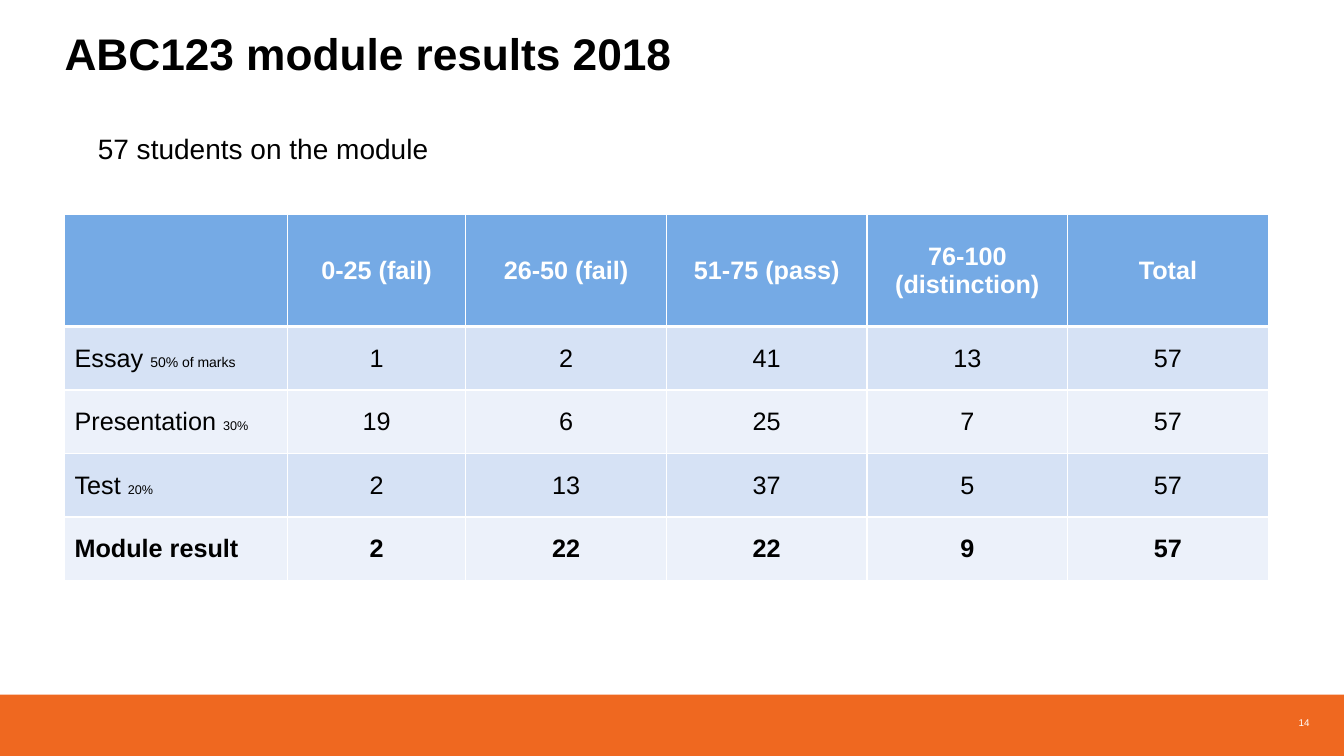
"""Build the slide with the ABC123 module results table."""
from lxml import etree
from pptx import Presentation
from pptx.dml.color import RGBColor
from pptx.enum.shapes import MSO_SHAPE as Shape
from pptx.enum.text import MSO_ANCHOR as Anchor, PP_ALIGN as Align
from pptx.oxml.ns import qn
from pptx.util import Inches, Pt

WHITE = RGBColor(0xFF, 0xFF, 0xFF)
BLACK = RGBColor(0, 0, 0)
ORANGE = RGBColor(0xEF, 0x68, 0x20)
HEADER_BLUE = RGBColor(0x75, 0xAA, 0xE5)
BAND_BLUE = RGBColor(0xD6, 0xE2, 0xF5)
PALE_BLUE = RGBColor(0xEC, 0xF1, 0xFA)

COLUMN_WIDTHS = [2.21, 1.77, 1.99, 1.99, 1.99, 1.99]
ROW_HEIGHTS = [1.11, 0.63, 0.63, 0.63, 0.63]
RESULTS = [
    ["", "0-25 (fail)", "26-50 (fail)", "51-75 (pass)", "76-100 (distinction)", "Total"],
    ["Essay", 1, 2, 41, 13, 57],
    ["Presentation", 19, 6, 25, 7, 57],
    ["Test", 2, 13, 37, 5, 57],
    ["Module result", 2, 22, 22, 9, 57],
]
WEIGHTS = {"Essay": ("50% of marks", 10), "Presentation": ("30%", 9), "Test": ("20%", 9)}


def add_run(paragraph, text, size, color=BLACK, bold=False):
    run = paragraph.add_run()
    run.text = text
    run.font.name = "Arial"
    run.font.size = Pt(size)
    run.font.bold = bold
    run.font.color.rgb = color


def add_text(slide, text, left, top, width, height, size, color=BLACK, bold=False):
    frame = slide.shapes.add_textbox(
        Inches(left), Inches(top), Inches(width), Inches(height)).text_frame
    frame.word_wrap = True
    frame.margin_left = frame.margin_right = frame.margin_top = frame.margin_bottom = 0
    add_run(frame.paragraphs[0], text, size, color, bold)
    return frame


presentation = Presentation()
presentation.slide_width = Inches(13.33)
presentation.slide_height = Inches(7.5)
slide = presentation.slides.add_slide(presentation.slide_layouts[6])

footer = slide.shapes.add_shape(
    Shape.RECTANGLE, 0, Inches(6.89), Inches(13.33), Inches(0.61))
footer.shadow.inherit = False
footer.fill.solid()
footer.fill.fore_color.rgb = ORANGE
footer.line.fill.background()

page_number = add_text(slide, "14", 12.58, 6.86, 0.71, 0.62, 7, WHITE)
page_number.vertical_anchor = Anchor.MIDDLE
page_number.paragraphs[0].alignment = Align.CENTER

title = add_text(slide, "ABC123 module results 2018", 0.64, 0.28, 8.08, 1.02, 31.6, bold=True)
title.paragraphs[0].line_spacing = Pt(36.5)

table = slide.shapes.add_table(
    len(RESULTS), len(COLUMN_WIDTHS), Inches(0.64), Inches(2.13),
    Inches(sum(COLUMN_WIDTHS)), Inches(sum(ROW_HEIGHTS))).table
for column, width in zip(table.columns, COLUMN_WIDTHS):
    column.width = Inches(width)
for row, height in zip(table.rows, ROW_HEIGHTS):
    row.height = Inches(height)

for row_index, values in enumerate(RESULTS):
    is_header = row_index == 0
    bold = is_header or row_index == len(RESULTS) - 1
    band = HEADER_BLUE if is_header else BAND_BLUE if row_index % 2 else PALE_BLUE
    for column_index, value in enumerate(values):
        cell = table.cell(row_index, column_index)
        cell.vertical_anchor = Anchor.MIDDLE
        paragraph = cell.text_frame.paragraphs[0]
        paragraph.alignment = Align.CENTER if column_index else Align.LEFT
        if value in WEIGHTS:
            add_run(paragraph, f"{value} ", 18)
            add_run(paragraph, *WEIGHTS[value])
        elif value != "":
            add_run(paragraph, str(value), 18, WHITE if is_header else BLACK, bold)
        properties = cell._tc.get_or_add_tcPr()
        for side in ("lnL", "lnR", "lnT", "lnB"):
            thick = (is_header and side == "lnB") or (row_index == 1 and side == "lnT")
            border = etree.SubElement(
                properties, qn(f"a:{side}"), w=str(Pt(3 if thick else 1)))
            fill = etree.SubElement(border, qn("a:solidFill"))
            etree.SubElement(fill, qn("a:srgbClr"), val=str(WHITE))
        cell.fill.solid()
        cell.fill.fore_color.rgb = band

add_text(slide, "57 students on the module", 0.97, 1.3, 8.69, 0.65, 20)

presentation.save("out.pptx")
